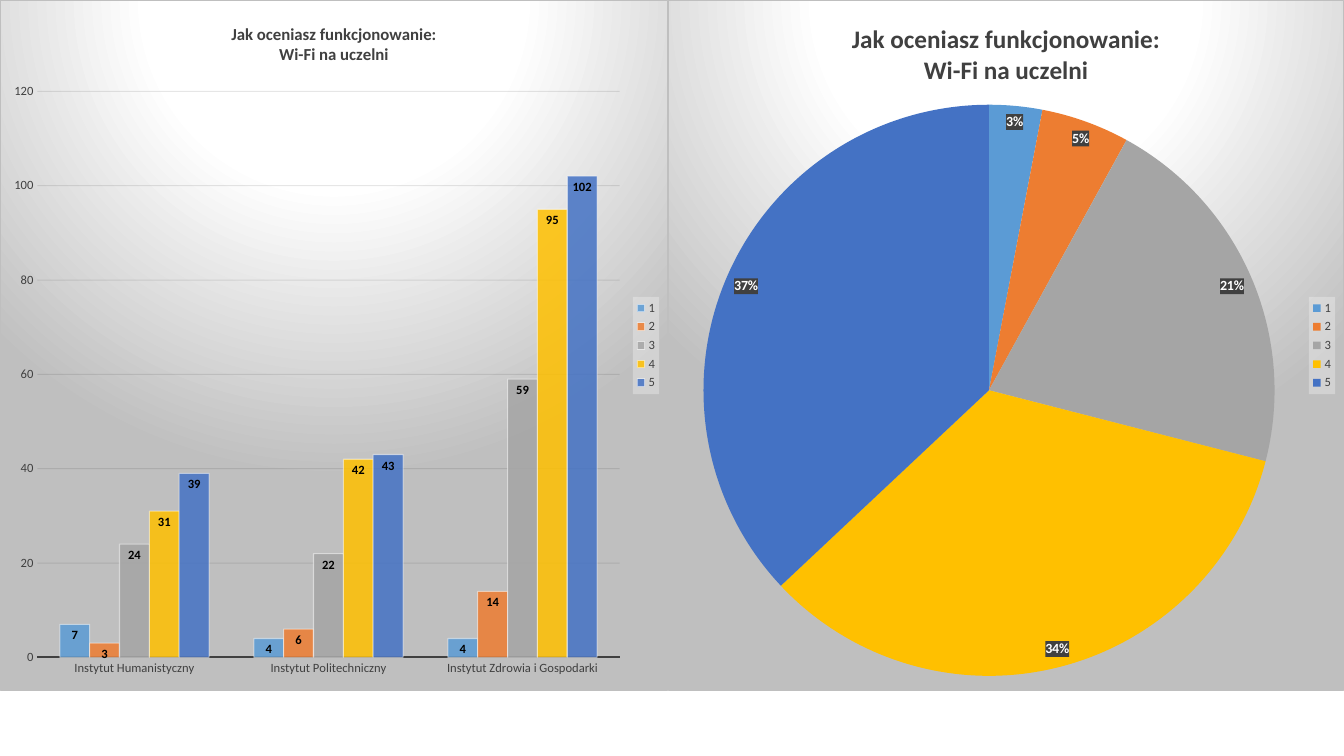
from pptx import Presentation, util as u
from pptx.chart import data as chart_data
from pptx.dml.color import RGBColor
from pptx.enum import chart as kinds
from pptx.oxml import parse_xml
from pptx.oxml.ns import nsdecls, qn

PX = 914400 / 100.8
THEME = {
    "font": "Calibri", "ink": "404040", "black": "000000", "white": "FFFFFF",
    "grid": "0D0D0D", "border": "BFBFBF", "legend": "F2F2F2",
    "grades": ["5B9BD5", "ED7D31", "A5A5A5", "FFC000", "4472C4"],
    "small": 9, "body": 10, "bar_title": 12, "pie_title": 18,
}
QUESTION = ["Jak oceniasz funkcjonowanie:", "Wi-Fi na uczelni"]
INSTITUTES = ["Instytut Humanistyczny", "Instytut Politechniczny",
              "Instytut Zdrowia i Gospodarki"]
VOTES = {"1": (7, 4, 4), "2": (3, 6, 14), "3": (24, 22, 59),
         "4": (31, 42, 95), "5": (39, 43, 102)}
SHARES = (3, 5, 21, 34, 37)


def write(target, lines=(), size=THEME["small"], color=THEME["ink"], bold=False):
    """Format a font owner, or fill a text frame with formatted lines."""
    owners = [] if lines else [target]
    for number, line in enumerate(lines):
        paragraph = target.add_paragraph() if number else target.paragraphs[0]
        run = paragraph.add_run()
        run.text = line
        owners += [paragraph, run]
    for owner in owners:
        owner.font.name = THEME["font"]
        owner.font.size = u.Pt(size)
        owner.font.bold = bold
        owner.font.color.rgb = RGBColor.from_string(color)


def paint(chart, part, fill, line="<a:noFill/>"):
    """Give a chart part its area fill and outline, ahead of its text format."""
    chart.element.xpath(f"{part}/c:txPr")[0].addprevious(parse_xml(
        f'<c:spPr {nsdecls("c", "a")}>{fill}<a:ln w="9525">{line}</a:ln></c:spPr>'))


prs = Presentation()
prs.slide_width, prs.slide_height = u.Emu(round(1344 * PX)), u.Emu(round(756 * PX))
slide = prs.slides.add_slide(prs.slide_layouts[6])

# Chart data
bar_data = chart_data.CategoryChartData()
bar_data.categories = INSTITUTES
for grade, votes in VOTES.items():
    bar_data.add_series(grade, votes)
pie_data = chart_data.CategoryChartData()
pie_data.categories = list(VOTES)
pie_data.add_series("Series 1", SHARES)

# Both charts: frame, title, legend and plot area
solid = '<a:solidFill><a:srgbClr val="{}"><a:alpha val="{}"/></a:srgbClr></a:solidFill>'
stops = "".join(f'<a:gs pos="{pos}"><a:srgbClr val="{color}"/></a:gs>' for pos, color in (
    (0, THEME["white"]), (39000, THEME["white"]), (100000, THEME["border"])))
backdrop = (f'<a:gradFill><a:gsLst>{stops}</a:gsLst><a:path path="circle">'
            '<a:fillToRect l="50000" t="-80000" r="50000" b="180000"/></a:path></a:gradFill>')
charts = []
for kind, values, left, width, title_size, plot_box in (
    (kinds.XL_CHART_TYPE.COLUMN_CLUSTERED, bar_data, 0, 668, THEME["bar_title"],
     (37, 91, 583, 567)),
    (kinds.XL_CHART_TYPE.PIE, pie_data, 668, 676, THEME["pie_title"],
     (35, 104, 572, 573)),
):
    frame = [u.Emu(round(n * PX)) for n in (left, 0, width, 691)]
    chart = slide.shapes.add_chart(kind, *frame, values).chart
    write(chart, size=THEME["body"], color=THEME["black"])
    paint(chart, ".", backdrop, solid.format(THEME["border"], 100000))

    chart.has_title = True
    write(chart.chart_title.text_frame, QUESTION, size=title_size, bold=True)
    chart.chart_title.include_in_layout = False

    chart.has_legend = True
    chart.legend.position = kinds.XL_LEGEND_POSITION.RIGHT
    chart.legend.include_in_layout = False
    write(chart.legend)
    paint(chart, ".//c:legend", solid.format(THEME["legend"], 39000))

    plot_area = chart.element.xpath(".//c:plotArea")[0]
    for layout in plot_area.findall(qn("c:layout")):
        plot_area.remove(layout)
    sizes = "".join(f'<c:{name} val="{length / total:.4f}"/>' for name, length, total in
                    zip("xywh", plot_box, (width, 691, width, 691)))
    plot_area.insert(0, parse_xml(
        f'<c:layout {nsdecls("c")}><c:manualLayout><c:layoutTarget val="inner"/>'
        f'<c:xMode val="edge"/><c:yMode val="edge"/>{sizes}</c:manualLayout></c:layout>'))
    charts.append(chart)
bars, pie = charts

# Bar axes
for axis in (bars.category_axis, bars.value_axis):
    axis.major_tick_mark = axis.minor_tick_mark = kinds.XL_TICK_MARK.NONE
    write(axis.tick_labels)
bars.category_axis.format.line.color.rgb = RGBColor.from_string(THEME["ink"])
bars.category_axis.format.line.width = u.Pt(1.5)
scale = bars.value_axis
scale.minimum_scale, scale.maximum_scale, scale.major_unit = 0, 120, 20
scale.format.line.fill.background()
scale.has_major_gridlines = True
grid = scale.major_gridlines.format.line
grid.color.rgb = RGBColor.from_string(THEME["grid"])
grid.width = u.Pt(0.75)

# Bars, one series per grade
bar_plot = bars.plots[0]
bar_plot.gap_width, bar_plot.overlap = 150, 0
bar_plot.vary_by_categories = False
for series, color in zip(bar_plot.series, THEME["grades"]):
    series.invert_if_negative = False
    series.format.fill.solid()
    series.format.fill.fore_color.rgb = RGBColor.from_string(color)
    series.format.line.color.rgb = RGBColor.from_string(THEME["white"])
    series.format.line.width = u.Pt(0.75)
    labels = series.data_labels
    labels.show_value = True
    labels.position = kinds.XL_LABEL_POSITION.INSIDE_END
    write(labels, color=THEME["black"], bold=True)

# Transparency of grid lines, bars and bar outlines
for part, alpha in (("c:majorGridlines/c:spPr/a:ln", 10000),
                    ("c:ser/c:spPr", 85000), ("c:ser/c:spPr/a:ln", 50000)):
    for color in bars.element.xpath(f".//{part}/a:solidFill/a:srgbClr"):
        color.append(parse_xml(f'<a:alpha {nsdecls("a")} val="{alpha}"/>'))

# Pie slices and their percentages
pie.plots[0].vary_by_categories = True
slices = pie.plots[0].series[0]
for number, color in enumerate(THEME["grades"]):
    fill = slices.points[number].format.fill
    fill.solid()
    fill.fore_color.rgb = RGBColor.from_string(color)
labels = slices.data_labels
labels.show_value, labels.show_percentage = False, True
labels.number_format, labels.number_format_is_linked = "0%", False
labels.position = kinds.XL_LABEL_POSITION.BEST_FIT
write(labels, size=THEME["body"], color=THEME["white"], bold=True)
paint(pie, ".//c:ser/c:dLbls", solid.format(THEME["ink"], 90000))

prs.save("out.pptx")
